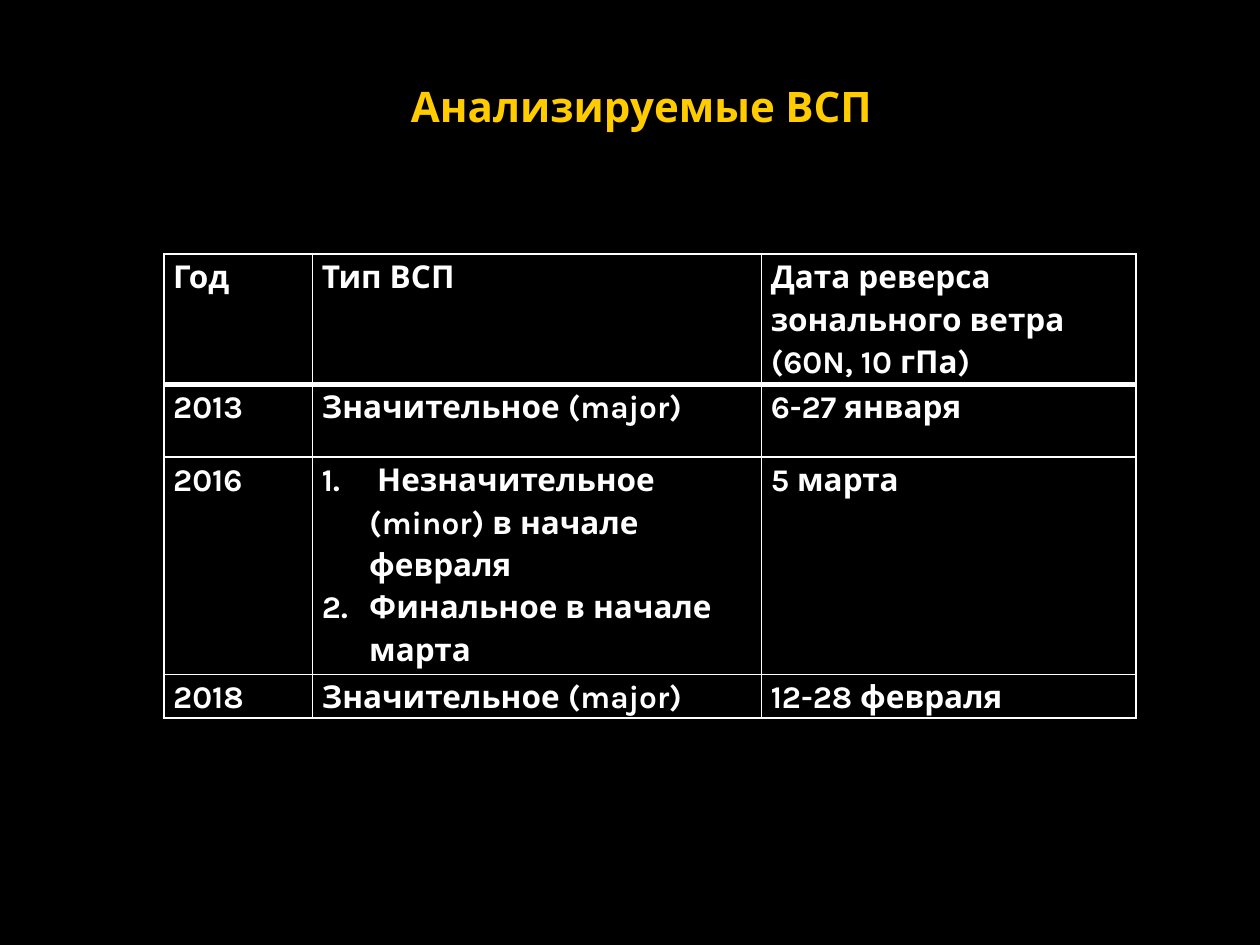
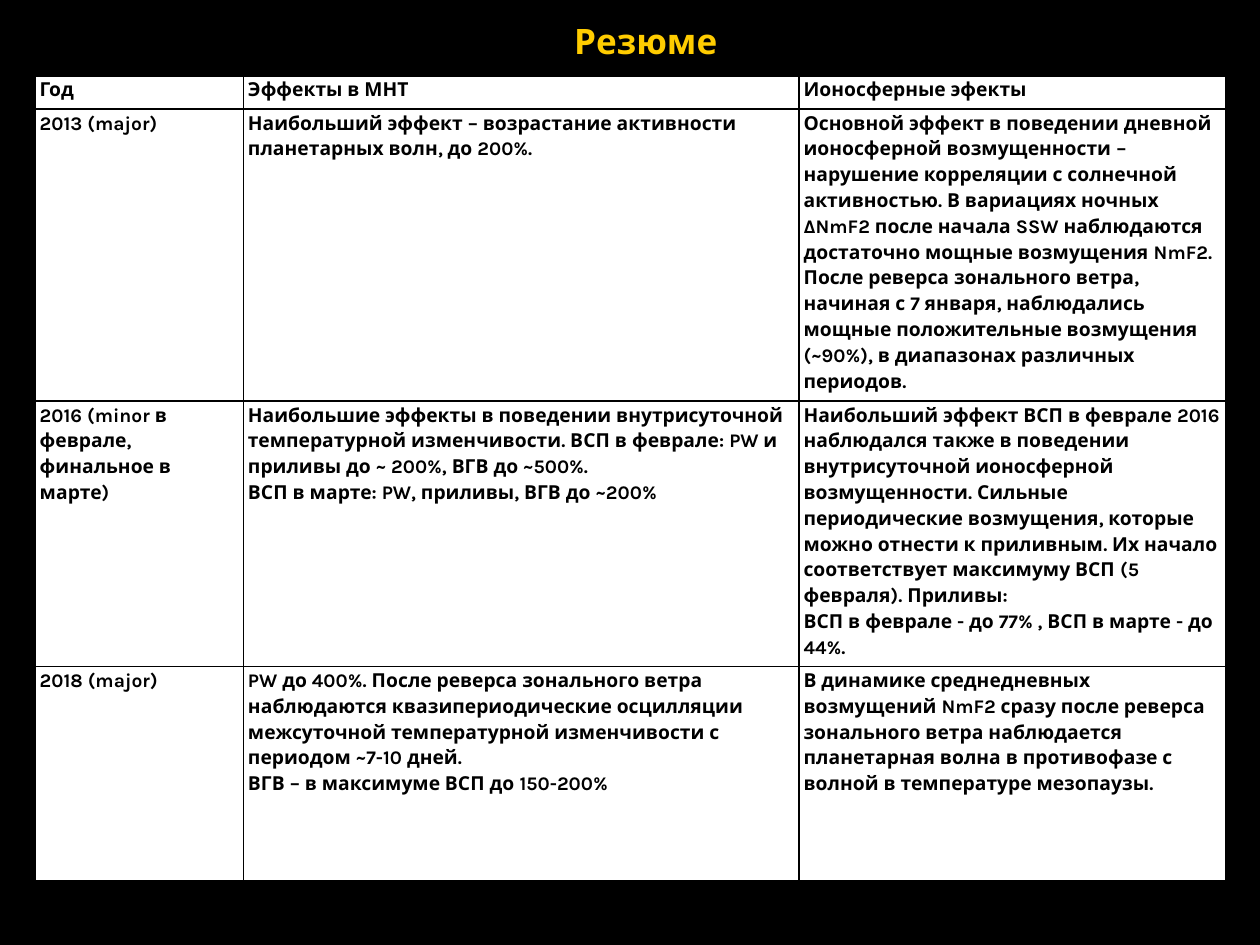
from dataclasses import dataclass

from lxml import etree
from pptx import Presentation
from pptx.dml.color import RGBColor
from pptx.enum import text
from pptx.oxml import ns
from pptx.util import Pt


@dataclass(frozen=True)
class Theme:
    font: str = "Karla"
    background: str = "000000"
    title: str = "FFCC00"
    light: str = "FFFFFF"
    dark: str = "000000"
    line_spacing: float = 1.15
    number_indent: float = 27
    border: float = 1
    header_rule: float = 3


THEME = Theme()

# Each cell is a list of paragraphs; lengths are in points.
EVENTS = {
    "title": "Анализируемые ВСП",
    "title_box": (42.5, 37.5, 648, 45.5),
    "title_size": 24,
    "origin": (93.6, 145.2),
    "columns": (85, 256.5, 214),
    "rows": (72.5, 41.5, 121, 24.5),
    "size": 18,
    "ink": THEME.light,
    "fill": None,
    "inset": 5.4,
    "header_rule": THEME.header_rule,
    "numbered": {(2, 1)},
    "cells": [
        [["Год"], ["Тип ВСП"], ["Дата реверса зонального ветра (60N, 10 гПа)"]],
        [["2013"], ["Значительное (major)"], ["6-27 января"]],
        [["2016"],
         [" Незначительное (minor) в начале февраля", "Финальное в начале марта"],
         ["5 марта"]],
        [["2018"], ["Значительное (major)"], ["12-28 февраля"]],
    ],
}

SUMMARY = {
    "title": "Резюме",
    "title_box": (54, 3, 630, 40),
    "title_size": 20,
    "origin": (20, 43.4),
    "columns": (119, 317.5, 244),
    "rows": (19, 162, 147.5, 122.4),
    "size": 11,
    "ink": THEME.dark,
    "fill": THEME.light,
    "inset": 2.7,
    "header_rule": THEME.border,
    "numbered": set(),
    "cells": [
        [["Год"], ["Эффекты в МНТ"], ["Ионосферные эфекты"]],
        [["2013 (major)"],
         ["Наибольший эффект – возрастание активности планетарных волн, до 200%."],
         ["Основной эффект в поведении дневной ионосферной возмущенности – "
          "нарушение корреляции с солнечной активностью. В вариациях ночных "
          "ΔNmF2 после начала SSW наблюдаются достаточно мощные возмущения NmF2. "
          "После реверса зонального ветра, начиная с 7 января, наблюдались "
          "мощные положительные возмущения (~90%), в диапазонах различных "
          "периодов."]],
        [["2016 (minor в феврале, финальное в марте)"],
         ["Наибольшие эффекты в поведении внутрисуточной температурной "
          "изменчивости. ВСП в феврале: PW и приливы до ~ 200%, ВГВ до ~500%.",
          "ВСП в марте: PW, приливы, ВГВ до ~200%"],
         ["Наибольший эффект ВСП в феврале 2016 наблюдался также в поведении "
          "внутрисуточной ионосферной возмущенности. Сильные периодические "
          "возмущения, которые можно отнести к приливным. Их начало "
          "соответствует максимуму ВСП (5 февраля). Приливы:",
          "ВСП в феврале - до 77% , ВСП в марте - до 44%."]],
        [["2018 (major)"],
         ["PW до 400%. После реверса зонального ветра наблюдаются "
          "квазипериодические осцилляции межсуточной температурной "
          "изменчивости с периодом ~7-10 дней.",
          "ВГВ – в максимуме ВСП до 150-200%"],
         ["В динамике среднедневных возмущений NmF2 сразу после реверса "
          "зонального ветра наблюдается планетарная волна в противофазе с "
          "волной в температуре мезопаузы."]],
    ],
}


def write(tf, paragraphs, *, size, color, align=text.PP_ALIGN.LEFT,
          spacing=1.0, numbered=False):
    tf.word_wrap = True
    for i, line in enumerate(paragraphs):
        p = tf.paragraphs[0] if i == 0 else tf.add_paragraph()
        p.alignment = align
        p.line_spacing = spacing
        r = p.add_run()
        r.text = line
        r.font.name = THEME.font
        r.font.size = Pt(size)
        r.font.bold = True
        r.font.color.rgb = RGBColor.from_string(color)
        if numbered:
            number(p)


def number(p):
    """Give a paragraph an automatic number and a hanging indent."""
    pPr = p._p.get_or_add_pPr()
    indent = Pt(THEME.number_indent)
    pPr.set("marL", str(indent))
    pPr.set("indent", str(-indent))
    etree.SubElement(pPr, ns.qn("a:buAutoNum"), type="arabicPeriod")


def set_borders(cell, color, widths):
    """Draw cell borders; widths run left, right, top, bottom."""
    tcPr = cell._tc.get_or_add_tcPr()
    for i, (side, width) in enumerate(zip("LRTB", widths)):
        ln = etree.Element(ns.qn(f"a:ln{side}"), w=str(Pt(width)))
        fill = etree.SubElement(ln, ns.qn("a:solidFill"))
        etree.SubElement(fill, ns.qn("a:srgbClr"), val=color)
        tcPr.insert(i, ln)


def add_title(s, page):
    sp = s.shapes.add_textbox(*map(Pt, page["title_box"]))
    tf = sp.text_frame
    tf.vertical_anchor = text.MSO_ANCHOR.MIDDLE
    write(tf, [page["title"]], size=page["title_size"], color=THEME.title,
          align=text.PP_ALIGN.CENTER)


def add_grid(s, page):
    columns, rows = page["columns"], page["rows"]
    box = (*page["origin"], sum(columns), sum(rows))
    table = s.shapes.add_table(len(rows), len(columns), *map(Pt, box)).table
    table.first_row = table.horz_banding = False
    for column, width in zip(table.columns, columns):
        column.width = Pt(width)
    for row, height in zip(table.rows, rows):
        row.height = Pt(height)

    for i, row in enumerate(page["cells"]):
        above = page["header_rule"] if i == 1 else THEME.border
        below = page["header_rule"] if i == 0 else THEME.border
        for j, paragraphs in enumerate(row):
            cell = table.cell(i, j)
            cell.margin_left = cell.margin_right = Pt(page["inset"])
            cell.margin_top = cell.margin_bottom = Pt(0)
            if page["fill"]:
                cell.fill.solid()
                cell.fill.fore_color.rgb = RGBColor.from_string(page["fill"])
            else:
                cell.fill.background()
            set_borders(cell, page["ink"],
                        (THEME.border, THEME.border, above, below))
            write(cell.text_frame, paragraphs, size=page["size"],
                  color=page["ink"], spacing=THEME.line_spacing,
                  numbered=(i, j) in page["numbered"])


def main():
    prs = Presentation()
    prs.slide_width, prs.slide_height = Pt(720), Pt(540)
    for page in (EVENTS, SUMMARY):
        s = prs.slides.add_slide(prs.slide_layouts[6])
        s.background.fill.solid()
        s.background.fill.fore_color.rgb = RGBColor.from_string(THEME.background)
        add_title(s, page)
        add_grid(s, page)
    prs.save("out.pptx")


if __name__ == "__main__":
    main()
